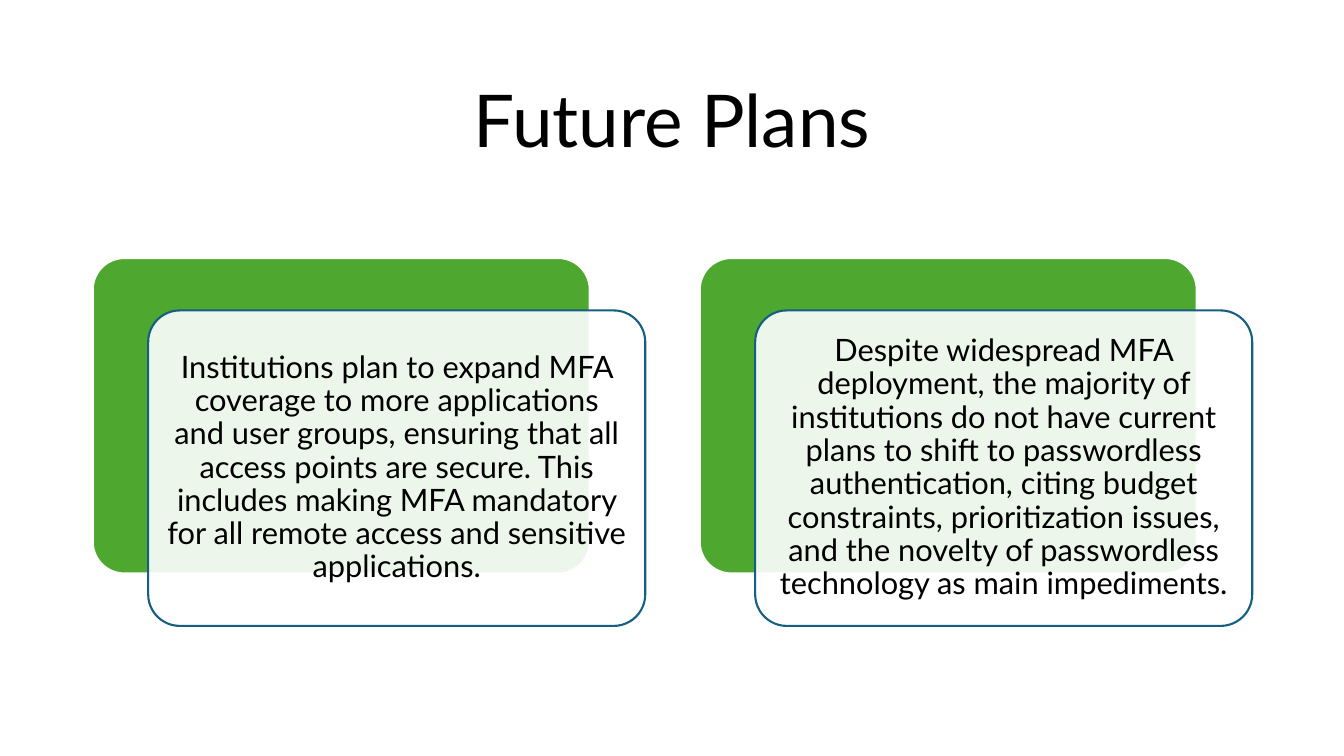
import pptx
import pptx.util
import pptx.dml.color
import pptx.enum.shapes
import pptx.enum.text
import pptx.oxml.ns
import lxml.etree

TITLE = "Future Plans"
PLANS = [
    "Institutions plan to expand MFA coverage to more applications and user groups, "
    "ensuring that all access points are secure. This includes making MFA mandatory "
    "for all remote access and sensitive applications.",
    "Despite widespread MFA deployment, the majority of institutions do not have "
    "current plans to shift to passwordless authentication, citing budget constraints, "
    "prioritization issues, and the novelty of passwordless technology as main "
    "impediments.",
]

FONT = "Lato"
BLACK = pptx.dml.color.RGBColor(0x00, 0x00, 0x00)
WHITE = pptx.dml.color.RGBColor(0xFF, 0xFF, 0xFF)
GREEN = pptx.dml.color.RGBColor(0x4E, 0xA7, 0x2E)
BLUE = pptx.dml.color.RGBColor(0x15, 0x60, 0x82)

SLIDE_WIDTH, SLIDE_HEIGHT = 13.33, 7.5
MARGIN = 0.92
TITLE_TOP, TITLE_HEIGHT = 0.61, 1.24
CARD_TOP, CARD_WIDTH, CARD_HEIGHT = 2.56, 4.93, 3.13
COLUMN_STEP = 6.02
OFFSET_X, OFFSET_Y = 0.55, 0.52
CARD_INSET = 0.09


def set_text(shape, text, size):
    frame = shape.text_frame
    frame.word_wrap = True
    frame.vertical_anchor = pptx.enum.text.MSO_ANCHOR.MIDDLE
    paragraph = frame.paragraphs[0]
    paragraph.text = text
    paragraph.alignment = pptx.enum.text.PP_ALIGN.CENTER
    paragraph.line_spacing = 0.9
    paragraph.font.name = FONT
    paragraph.font.size = pptx.util.Pt(size)
    paragraph.font.color.rgb = BLACK


def add_card(slide, left, top, fill, line):
    card = slide.shapes.add_shape(
        pptx.enum.shapes.MSO_SHAPE.ROUNDED_RECTANGLE,
        *map(pptx.util.Inches, (left, top, CARD_WIDTH, CARD_HEIGHT)))
    card.adjustments[0] = 0.1
    card.shadow.inherit = False
    card.fill.solid()
    card.fill.fore_color.rgb = fill
    card.line.color.rgb = line
    card.line.width = pptx.util.Pt(1.5)
    return card


def set_opacity(shape, percent):
    qn = pptx.oxml.ns.qn
    color = shape.element.spPr.find(qn("a:solidFill")).find(qn("a:srgbClr"))
    lxml.etree.SubElement(color, qn("a:alpha"), val=str(percent * 1000))


def add_plan(slide, column, text):
    left = MARGIN + column * COLUMN_STEP
    add_card(slide, left, CARD_TOP, GREEN, WHITE)
    front = add_card(slide, left + OFFSET_X, CARD_TOP + OFFSET_Y, WHITE, BLUE)
    set_opacity(front, 90)
    set_text(front, text, 22)
    frame = front.text_frame
    inset = pptx.util.Inches(CARD_INSET)
    frame.margin_left = frame.margin_right = inset
    frame.margin_top = frame.margin_bottom = inset


def main():
    presentation = pptx.Presentation()
    presentation.slide_width = pptx.util.Inches(SLIDE_WIDTH)
    presentation.slide_height = pptx.util.Inches(SLIDE_HEIGHT)
    slide = presentation.slides.add_slide(presentation.slide_layouts[6])
    title = slide.shapes.add_textbox(*map(
        pptx.util.Inches,
        (MARGIN, TITLE_TOP, SLIDE_WIDTH - 2 * MARGIN, TITLE_HEIGHT)))
    set_text(title, TITLE, 52)
    for column, text in enumerate(PLANS):
        add_plan(slide, column, text)
    presentation.save("out.pptx")


if __name__ == "__main__":
    main()
